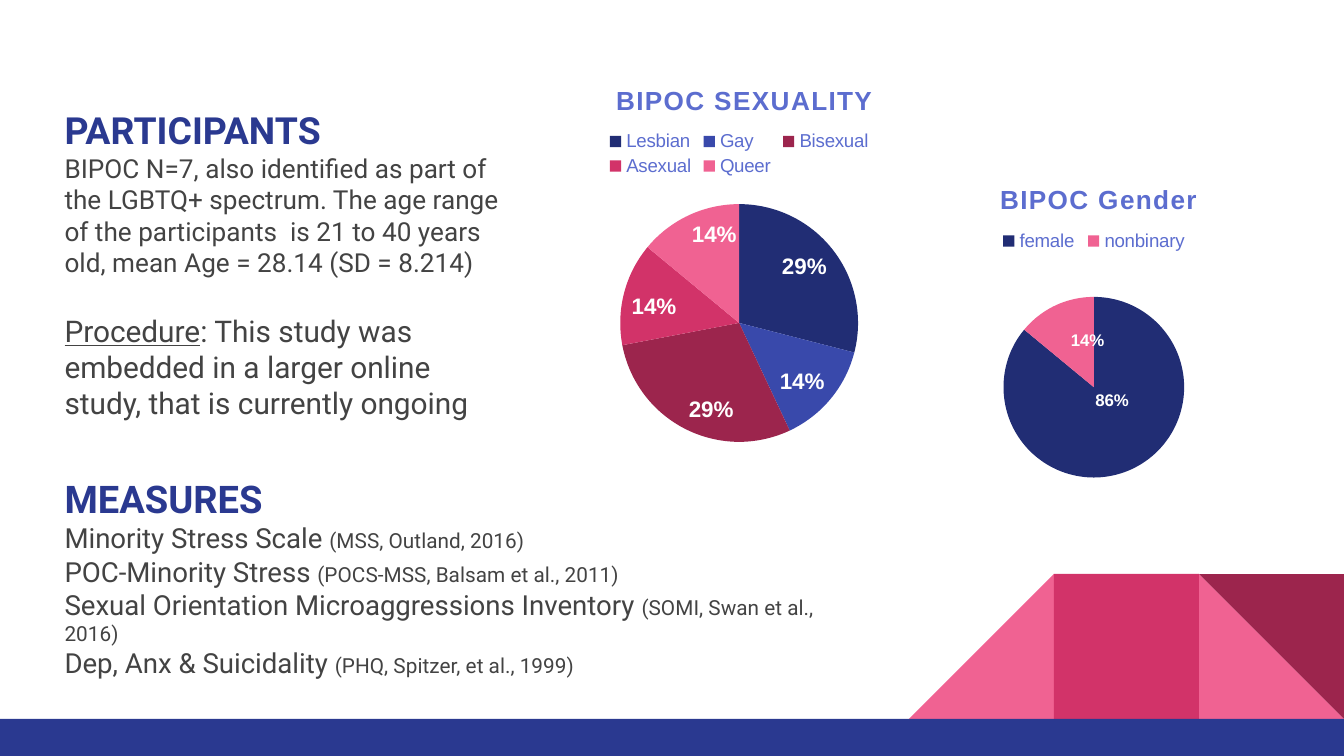
from copy import deepcopy
from dataclasses import dataclass

from lxml import etree
from pptx import Presentation
from pptx import util as u
from pptx.chart.data import CategoryChartData
from pptx.dml.color import RGBColor
from pptx.enum import chart as ch, shapes, text
from pptx.oxml.ns import qn

Cm, Pt = u.Cm, u.Pt


@dataclass(frozen=True)
class Theme:
    blue: str = "2A3990"
    navy: str = "212D74"
    indigo: str = "3949AB"
    lilac: str = "5C6DCF"
    wine: str = "9C254D"
    rose: str = "D23369"
    pink: str = "F06292"
    grey: str = "434343"
    white: str = "FFFFFF"
    body_font: str = "Roboto"
    chart_font: str = "Arial"
    heading: float = 20
    measures_heading: float = 20.4
    facts: float = 14
    procedure: float = 16
    measure: float = 14.8
    citation: float = 11.1
    chart_title: float = 14
    legend: float = 10


THEME = Theme()
MEASURES = [
    ("Minority Stress Scale ", "(MSS, Outland, 2016)"),
    ("POC-Minority Stress ", "(POCS-MSS, Balsam et al., 2011)"),
    ("Sexual Orientation Microaggressions Inventory ", "(SOMI, Swan et al., 2016)"),
    ("Dep, Anx & Suicidality ", "(PHQ, Spitzer, et al., 1999)"),
]


def style(font, size, color, family, bold=False):
    font.size, font.name, font.bold = Pt(size), family, bold
    font.color.rgb = RGBColor.from_string(color)


def add_run(paragraph, words, size, color=THEME.grey, bold=False):
    run = paragraph.add_run()
    run.text = words
    style(run.font, size, color, THEME.body_font, bold)
    return run


def add_paragraph(frame, first=False, before=0):
    """Start a flush-left paragraph without a bullet."""
    paragraph = frame.paragraphs[0] if first else frame.add_paragraph()
    paragraph.alignment = text.PP_ALIGN.LEFT
    paragraph.space_before = Pt(before)
    paragraph.space_after = Pt(0)
    paragraph.line_spacing = 1.0
    properties = paragraph._p.get_or_add_pPr()
    properties.set("marL", "0")
    properties.set("indent", "0")
    etree.SubElement(properties, qn("a:buNone"))
    return paragraph


def prepare_frame(frame, vertical_inset):
    frame.word_wrap = True
    frame.auto_size = text.MSO_AUTO_SIZE.NONE
    frame.vertical_anchor = text.MSO_ANCHOR.TOP
    frame.margin_left = frame.margin_right = Cm(0.25)
    frame.margin_top = frame.margin_bottom = Cm(vertical_inset)


def add_block(slide, kind, left, top, width, height, color, flip=False, turn=0):
    block = slide.shapes.add_shape(kind, Cm(left), Cm(top), Cm(width), Cm(height))
    block.shadow.inherit = False
    block.fill.solid()
    block.fill.fore_color.rgb = RGBColor.from_string(color)
    block.line.fill.background()
    block.rotation = turn
    if flip:
        block._element.spPr.xfrm.set("flipH", "1")


def add_footer(slide):
    side, top = 2.74, 10.85
    right = 25.4 - side
    triangle = shapes.MSO_SHAPE.RIGHT_TRIANGLE
    square = shapes.MSO_SHAPE.RECTANGLE
    tiles = [
        (triangle, 0, THEME.pink, False, 0),
        (triangle, 2, THEME.pink, True, 0),
        (square, 1, THEME.rose, False, 0),
        (triangle, 0, THEME.wine, False, 180),
    ]
    for kind, steps, color, flip, turn in tiles:
        add_block(slide, kind, right - steps * side, top, side, side, color, flip, turn)
    add_block(slide, square, 0, top + side, 25.4, 0.7, THEME.blue)


def add_participants(slide):
    box = slide.shapes.add_textbox(Cm(0.97), Cm(1.9), Cm(8.81), Cm(6.83))
    frame = box.text_frame
    prepare_frame(frame, 0.13)
    add_run(add_paragraph(frame, first=True), "PARTICIPANTS", THEME.heading, THEME.blue, True)
    add_run(add_paragraph(frame),
            "BIPOC N=7, also identified as part of the LGBTQ+ spectrum. The age range of "
            "the participants  is 21 to 40 years old, mean Age = 28.14 (SD = 8.214)",
            THEME.facts)
    procedure = add_paragraph(frame, before=18.75)
    add_run(procedure, "Procedure", THEME.procedure).font.underline = True
    add_run(procedure, ": This study was embedded in a larger online study, "
            "that is currently ongoing", THEME.procedure)


def fill_measures(body):
    body.left, body.top, body.width, body.height = Cm(0.97), Cm(8.74), Cm(15.34), Cm(4.5)
    frame = body.text_frame
    prepare_frame(frame, 0.25)
    add_run(add_paragraph(frame, first=True), "MEASURES",
            THEME.measures_heading, THEME.blue, True)
    for measure, citation in MEASURES:
        line = add_paragraph(frame)
        add_run(line, measure, THEME.measure)
        add_run(line, citation, THEME.citation)


def set_layout(parent, index, edge=True, inner=False, **fractions):
    """Place a chart part by fractions of the chart's size."""
    for old in parent.findall(qn("c:layout")):
        parent.remove(old)
    layout = etree.Element(qn("c:layout"))
    manual = etree.SubElement(layout, qn("c:manualLayout"))
    if inner:
        etree.SubElement(manual, qn("c:layoutTarget")).set("val", "inner")
    if edge:
        for mode in ("c:xMode", "c:yMode"):
            etree.SubElement(manual, qn(mode)).set("val", "edge")
    for key, value in fractions.items():
        etree.SubElement(manual, qn(f"c:{key}")).set("val", str(value))
    parent.insert(index, layout)


def shift_label(labels, point, x, y):
    """Move one label from its standard place, keeping the shared format."""
    label = etree.Element(qn("c:dLbl"))
    etree.SubElement(label, qn("c:idx")).set("val", str(point))
    for part in labels:
        if part.tag not in (qn("c:dLbl"), qn("c:showLeaderLines")):
            label.append(deepcopy(part))
    set_layout(label, 1, edge=False, x=x, y=y)
    labels.insert(point, label)


def add_pie(slide, title, slices, box, title_at, legend_at, pie_at, label_size, shifts=()):
    data = CategoryChartData()
    data.categories = [name for name, _, _ in slices]
    data.add_series("Series 1", [value for _, value, _ in slices])
    chart = slide.shapes.add_chart(ch.XL_CHART_TYPE.PIE, *map(Cm, box), data).chart
    style(chart.font, THEME.legend, THEME.blue, THEME.chart_font)

    # Title and legend
    heading = chart.chart_title.text_frame.paragraphs[0].add_run()
    heading.text = title
    style(heading.font, THEME.chart_title, THEME.lilac, THEME.chart_font, True)
    heading.font._element.set("spc", "60")
    set_layout(chart.chart_title._element, 1, **title_at)
    chart.has_legend = True
    chart.legend.position = ch.XL_LEGEND_POSITION.TOP
    chart.legend.include_in_layout = False
    style(chart.legend.font, THEME.legend, THEME.lilac, THEME.chart_font)
    set_layout(chart.legend._element, 1, **legend_at)

    # Slices and percentages
    plot = chart.plots[0]
    plot.vary_by_categories = True
    set_layout(plot._element.getparent(), 0, inner=True, **pie_at)
    series = plot.series[0]
    for index, (_, _, color) in enumerate(slices):
        fill = series.points[index].format.fill
        fill.solid()
        fill.fore_color.rgb = RGBColor.from_string(color)
    labels = series.data_labels
    labels.show_percentage, labels.show_value = True, False
    labels.number_format, labels.number_format_is_linked = "0%", False
    labels.position = ch.XL_LABEL_POSITION.INSIDE_END
    style(labels.font, label_size, THEME.white, THEME.chart_font, True)
    for point, (x, y) in enumerate(shifts):
        shift_label(labels._element, point, x, y)


def main():
    deck = Presentation()
    deck.slide_width, deck.slide_height = Cm(25.4), Cm(14.29)
    slide = deck.slides.add_slide(deck.slide_layouts[1])
    unused_title = slide.shapes.title._element
    unused_title.getparent().remove(unused_title)

    add_footer(slide)
    fill_measures(slide.placeholders[1])
    add_participants(slide)
    add_pie(slide, "BIPOC SEXUALITY",
            [("Lesbian", 29, THEME.navy), ("Gay", 14, THEME.indigo),
             ("Bisexual", 29, THEME.wine), ("Asexual", 14, THEME.rose),
             ("Queer", 14, THEME.pink)],
            (10.31, 1.04, 7.32, 7.62), dict(x=0.17, y=0.06),
            dict(x=0.15, y=0.18, w=0.7, h=0.13),
            dict(x=0.19, y=0.37, w=0.62, h=0.59), 12)
    add_pie(slide, "BIPOC Gender",
            [("female", 86, THEME.navy), ("nonbinary", 14, THEME.pink)],
            (16.84, 2.95, 7.59, 6.83), dict(x=0.26, y=0.06),
            dict(x=0.26, y=0.2, w=0.49, h=0.07),
            dict(x=0.28, y=0.39, w=0.45, h=0.5), 9,
            shifts=[(0, -0.14), (0.03, 0.05)])
    deck.save("out.pptx")


if __name__ == "__main__":
    main()
